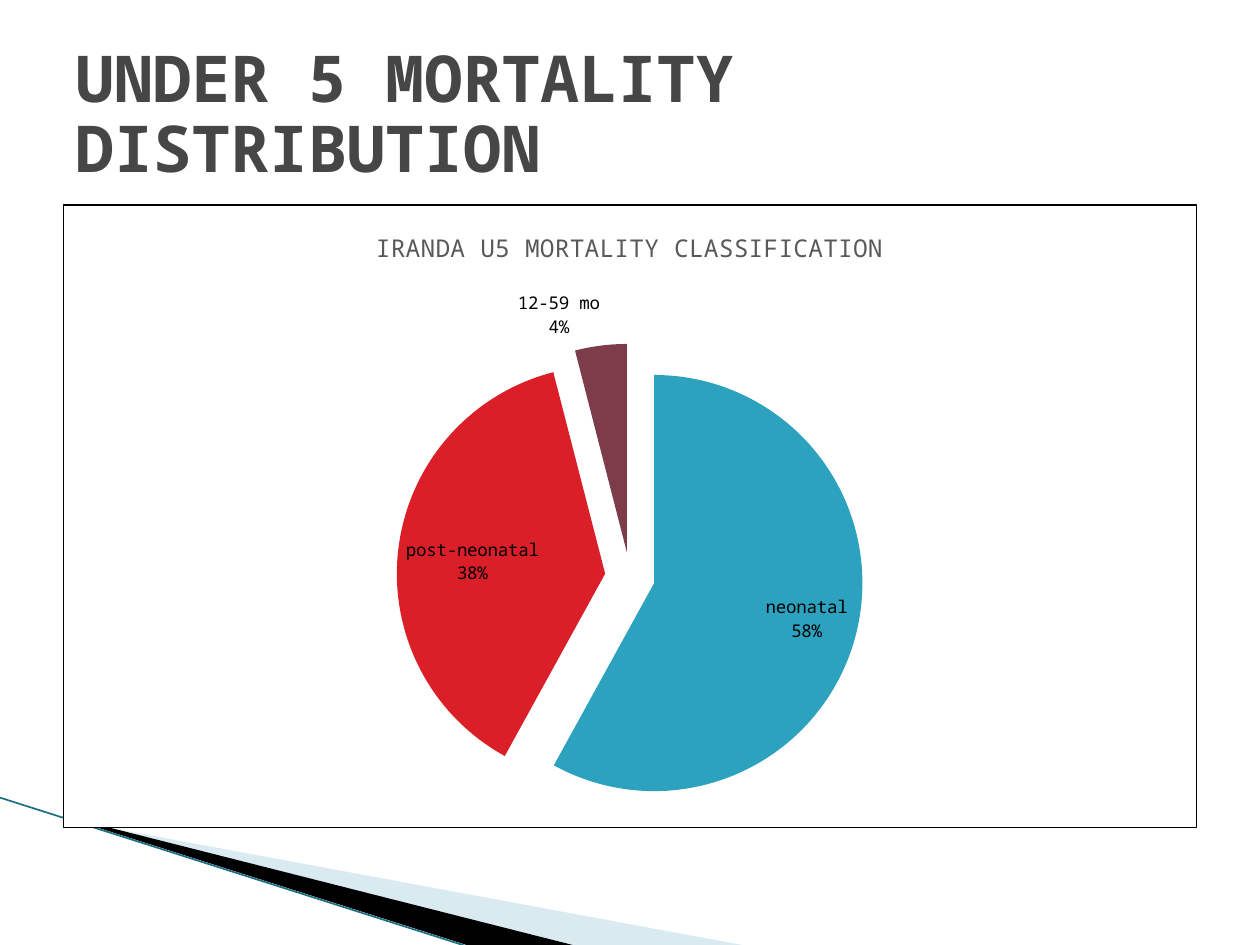
import lxml.etree
import pptx
import pptx.chart.data
import pptx.dml.color
import pptx.enum.chart
import pptx.enum.shapes
import pptx.enum.text
import pptx.oxml
import pptx.oxml.ns
import pptx.util

Cm = pptx.util.Cm
Pt = pptx.util.Pt
RGBColor = pptx.dml.color.RGBColor
qn = pptx.oxml.ns.qn

FONT = "Noto Sans Mono"
WHITE = RGBColor(0xFF, 0xFF, 0xFF)
BLACK = RGBColor(0, 0, 0)
TITLE_GREY = RGBColor(0x46, 0x46, 0x46)
CHART_GREY = RGBColor(0x59, 0x59, 0x59)
PALE_BLUE = RGBColor(0xA0, 0xCB, 0xDC)
DEEP_TEAL = RGBColor(0x1B, 0x6F, 0x83)
SLICES = [
    ("neonatal", 58, RGBColor(0x2D, 0xA2, 0xBF)),
    ("post-neonatal", 38, RGBColor(0xDA, 0x1F, 0x28)),
    ("12-59 mo", 4, RGBColor(0x7D, 0x3C, 0x4A)),
]


def add_wedge(page, left, top, points, color, opacity=100):
    """Draw a filled outline from points in centimetres relative to left, top."""
    corners = [(Cm(left + x), Cm(top + y)) for x, y in points]
    builder = page.shapes.build_freeform(*corners[0])
    builder.add_line_segments(corners[1:], close=True)
    wedge = builder.convert_to_shape()
    wedge.shadow.inherit = False
    wedge.fill.solid()
    wedge.fill.fore_color.rgb = color
    wedge.line.fill.background()
    if opacity < 100:
        tint = wedge._element.spPr.find(".//" + qn("a:srgbClr"))
        lxml.etree.SubElement(tint, qn("a:alpha"), val=str(opacity * 1000))


def add_corner_sweep(page, left, top, width, height):
    """Draw the two wedges and the thin line across the bottom left corner."""
    start = 1.4
    add_wedge(page, left + start, top + 0.43,
              [(0, 0.03), (13.72, 2.57), (10.18, 2.57), (0, 0)], PALE_BLUE, 40)
    add_wedge(page, left + start, top + 0.4,
              [(0, 0), (10.26, 2.6), (8.1, 2.6), (0.02, 0.03)], BLACK)
    edge = page.shapes.add_connector(
        pptx.enum.shapes.MSO_CONNECTOR.STRAIGHT,
        Cm(left), Cm(top), Cm(left + width), Cm(top + height))
    edge.line.color.rgb = DEEP_TEAL
    edge.line.width = Pt(0.95)
    lxml.etree.SubElement(edge._element.spPr, qn("a:effectLst"))


def add_title(page, left, top, width, height):
    """Place the slide heading."""
    box = page.shapes.add_textbox(Cm(left), Cm(top), Cm(width), Cm(height))
    frame = box.text_frame
    frame.word_wrap = True
    frame.vertical_anchor = pptx.enum.text.MSO_ANCHOR.MIDDLE
    para = frame.paragraphs[0]
    para.text = "UNDER 5 MORTALITY DISTRIBUTION"
    para.line_spacing = 0.9
    para.font.name = FONT
    para.font.size = Pt(36.9)
    para.font.bold = True
    para.font.color.rgb = TITLE_GREY


def frame_chart(chart):
    """Give the chart a white ground and a thin black border."""
    ground = pptx.oxml.parse_xml(
        f'<c:spPr {pptx.oxml.ns.nsdecls("c", "a")}>'
        f'<a:solidFill><a:srgbClr val="{WHITE}"/></a:solidFill>'
        f'<a:ln w="{Pt(0.75)}"><a:solidFill><a:srgbClr val="{BLACK}"/>'
        '</a:solidFill></a:ln></c:spPr>')
    chart._chartSpace.find(qn("c:chart")).addnext(ground)


def add_mortality_pie(page, left, top, width, height):
    """Place the exploded pie with its title and slice labels."""
    data = pptx.chart.data.CategoryChartData()
    data.categories = [name for name, _, _ in SLICES]
    data.add_series("Series 1", [value for _, value, _ in SLICES])
    chart = page.shapes.add_chart(
        pptx.enum.chart.XL_CHART_TYPE.PIE_EXPLODED,
        Cm(left), Cm(top), Cm(width), Cm(height), data).chart
    chart.font.name = FONT
    chart.font.size = Pt(10)
    chart.font.color.rgb = BLACK
    chart.has_legend = False
    frame_chart(chart)

    chart.has_title = True
    para = chart.chart_title.text_frame.paragraphs[0]
    para.text = "IRANDA U5 MORTALITY CLASSIFICATION"
    para.font.name = FONT
    para.font.size = Pt(14)
    para.font.bold = False
    para.font.color.rgb = CHART_GREY
    chart.chart_title.include_in_layout = False

    plot = chart.plots[0]
    plot.vary_by_categories = True
    series = plot.series[0]
    series._element.find(qn("c:explosion")).set("val", "12")
    for index, (_, _, color) in enumerate(SLICES):
        fill = series.points[index].format.fill
        fill.solid()
        fill.fore_color.rgb = color
        point = series._element.findall(qn("c:dPt"))[index]
        blast = pptx.oxml.parse_xml(
            f'<c:explosion {pptx.oxml.ns.nsdecls("c")} val="12"/>')
        point.find(qn("c:spPr")).addprevious(blast)

    labels = series.data_labels
    labels.show_value = False
    labels.show_category_name = True
    labels.show_percentage = True
    labels.number_format = "0%"
    labels.number_format_is_linked = False
    labels.position = pptx.enum.chart.XL_LABEL_POSITION.BEST_FIT
    labels.font.name = FONT
    labels.font.size = Pt(10)
    labels.font.color.rgb = BLACK
    separator = pptx.oxml.parse_xml(
        f'<c:separator {pptx.oxml.ns.nsdecls("c")}>\n</c:separator>')
    labels._element.find(qn("c:showBubbleSize")).addnext(separator)


def main():
    """Build and save the one-page deck."""
    deck = pptx.Presentation()
    deck.slide_width, deck.slide_height = Cm(25.4), Cm(19.05)
    page = deck.slides.add_slide(deck.slide_layouts[6])
    page.background.fill.solid()
    page.background.fill.fore_color.rgb = WHITE
    margin, content_width = 1.27, 22.86
    add_corner_sweep(page, 0, 16.08, 9.42, 3)
    add_title(page, margin, 0.76, content_width, 3.18)
    add_mortality_pie(page, margin, 4.12, content_width, 12.57)
    deck.save("out.pptx")


if __name__ == "__main__":
    main()
